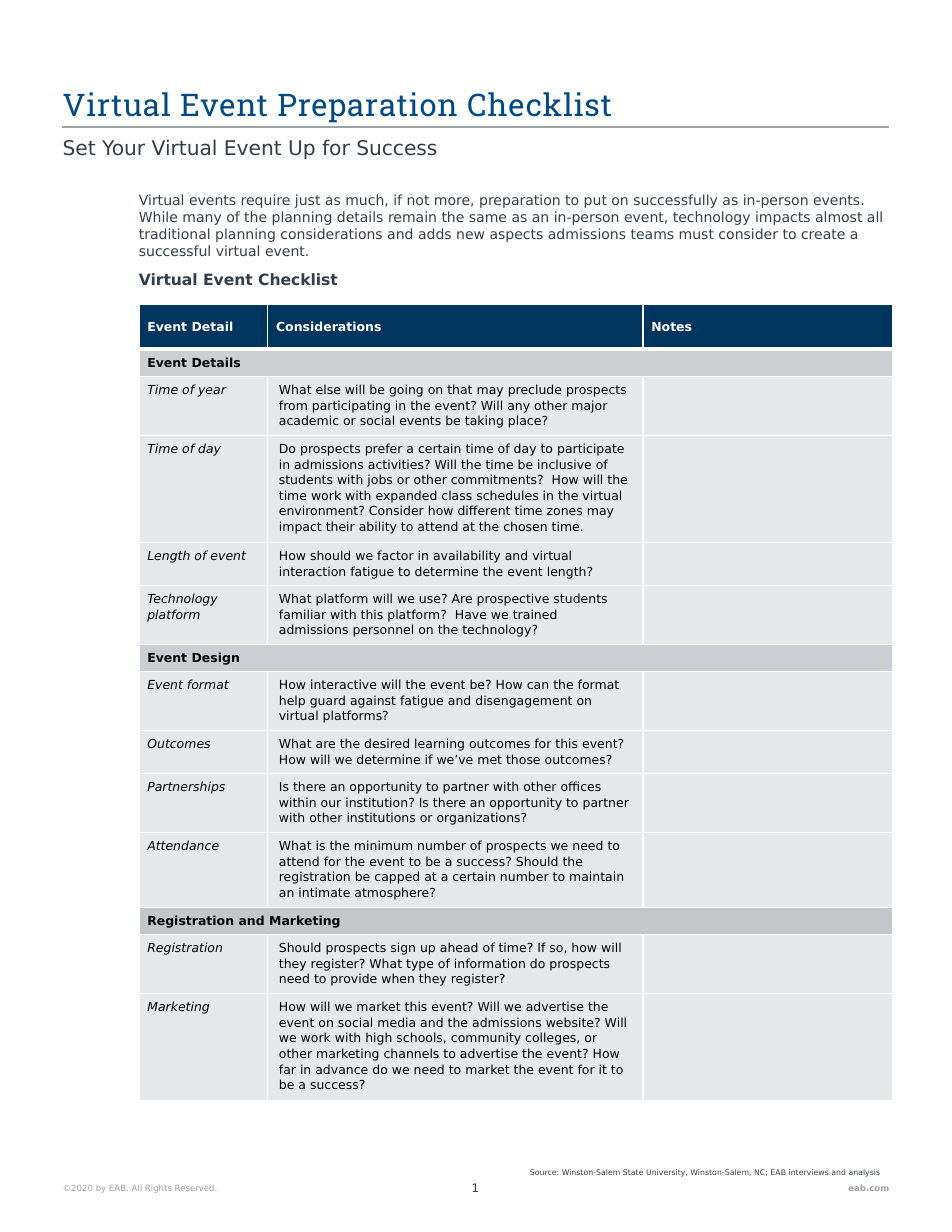
from dataclasses import dataclass

from lxml import etree
from pptx import Presentation
from pptx.dml.color import RGBColor
from pptx.enum.shapes import MSO_CONNECTOR
from pptx.enum.text import MSO_ANCHOR, PP_ALIGN
from pptx.oxml.ns import qn
from pptx.util import Pt

LEFT, CENTER, RIGHT = PP_ALIGN.LEFT, PP_ALIGN.CENTER, PP_ALIGN.RIGHT
TOP, MIDDLE, BOTTOM = MSO_ANCHOR.TOP, MSO_ANCHOR.MIDDLE, MSO_ANCHOR.BOTTOM
STRAIGHT = MSO_CONNECTOR.STRAIGHT


@dataclass(frozen=True)
class Theme:
    body_font: str = "DejaVu Sans"
    title_font: str = "Roboto Slab"
    title: str = "004B87"
    text: str = "333E48"
    muted: str = "9DA2A7"
    black: str = "000000"
    white: str = "FFFFFF"
    header: str = "00355F"
    row: str = "E7E8EA"
    title_size: float = 20
    subtitle_size: float = 13
    heading_size: float = 10
    intro_size: float = 9
    table_size: float = 8
    page_size: float = 7.5
    footer_size: float = 5.5
    source_size: float = 5


HEADINGS = ("Event Detail", "Considerations", "Notes")
COLUMN_WIDTHS = (82.8, 241.2, 160.56)
HEADER_HEIGHT = 28.8
LINE_HEIGHT = 10.2
CELL_PADDING = 7.2

SECTIONS = [
    ("Event Details", "CCCED2", [
        ("Time of year", 3, "What else will be going on that may preclude prospects from participating in the event? "
         "Will any other major academic or social events be taking place?"),
        ("Time of day", 6, "Do prospects prefer a certain time of day to participate in admissions activities? "
         "Will the time be inclusive of students with jobs or other commitments?  How will the time work with "
         "expanded class schedules in the virtual environment? Consider how different time zones may impact "
         "their ability to attend at the chosen time."),
        ("Length of event", 2, "How should we factor in availability and virtual interaction fatigue to determine "
         "the event length?"),
        ("Technology platform", 3, "What platform will we use? Are prospective students familiar with this "
         "platform?  Have we trained admissions personnel on the technology?"),
    ]),
    ("Event Design", "CBCED2", [
        ("Event format", 3, "How interactive will the event be? How can the format help guard against fatigue and "
         "disengagement on virtual platforms?"),
        ("Outcomes", 2, "What are the desired learning outcomes for this event? How will we determine if we’ve met "
         "those outcomes?"),
        ("Partnerships", 3, "Is there an opportunity to partner with other offices within our institution? "
         "Is there an opportunity to partner with other institutions or organizations?"),
        ("Attendance", 4, "What is the minimum number of prospects we need to attend for the event to be a success? "
         "Should the registration be capped at a certain number to maintain an intimate atmosphere?"),
    ]),
    ("Registration and Marketing", "C4C7CA", [
        ("Registration", 3, "Should prospects sign up ahead of time? If so, how will they register? What type of "
         "information do prospects need to provide when they register?"),
        ("Marketing", 6, "How will we market this event? Will we advertise the event on social media and the "
         "admissions website? Will we work with high schools, community colleges, or other marketing channels to "
         "advertise the event? How far in advance do we need to market the event for it to be a success?"),
    ]),
]


class ChecklistPage:
    def __init__(self, slide, theme):
        self.slide = slide
        self.theme = theme

    def add_run(self, para, text, size, color, bold=False, italic=False, font=None):
        span = para.add_run()
        span.text = text
        span.font.name = font or self.theme.body_font
        span.font.size = Pt(size)
        span.font.bold = bold
        span.font.italic = italic
        span.font.color.rgb = RGBColor.from_string(color)
        return span

    def prepare_frame(self, frame, anchor):
        frame.margin_left = frame.margin_top = frame.margin_right = frame.margin_bottom = 0
        frame.word_wrap = True
        frame.vertical_anchor = anchor

    def title(self, left, top, width, height, text):
        box = self.slide.shapes.title
        box.left, box.top, box.width, box.height = Pt(left), Pt(top), Pt(width), Pt(height)
        self.prepare_frame(box.text_frame, BOTTOM)
        para = box.text_frame.paragraphs[0]
        para.alignment = LEFT
        para.line_spacing = 0.9
        span = self.add_run(para, text, self.theme.title_size, self.theme.title, font=self.theme.title_font)
        span.font._element.set("spc", "50")

    def text(self, left, top, width, height, text, size, color=None, bold=False, align=LEFT, anchor=TOP):
        box = self.slide.shapes.add_textbox(Pt(left), Pt(top), Pt(width), Pt(height))
        self.prepare_frame(box.text_frame, anchor)
        para = box.text_frame.paragraphs[0]
        para.alignment = align
        self.add_run(para, text, size, color or self.theme.text, bold)

    def rule(self, left, top, right):
        line = self.slide.shapes.add_connector(STRAIGHT, Pt(left), Pt(top), Pt(right), Pt(top))
        line.line.color.rgb = RGBColor.from_string(self.theme.muted)
        line.line.width = Pt(1)
        etree.SubElement(line._element.spPr, qn("a:effectLst"))

    def cell(self, cell, text, fill, color=None, bold=False, italic=False, inset=5.4, anchor=TOP, bottom=1):
        cell.margin_left = cell.margin_right = Pt(inset)
        cell.margin_top = cell.margin_bottom = Pt(CELL_PADDING / 2)
        cell.vertical_anchor = anchor
        para = cell.text_frame.paragraphs[0]
        size = self.theme.table_size
        if text:
            para.line_spacing = 1.07
            self.add_run(para, text, size, color or self.theme.black, bold, italic)
        else:
            etree.SubElement(para._p, qn("a:endParaRPr"), sz=str(size * 100))
        properties = cell._tc.get_or_add_tcPr()
        for side, width in (("L", 1), ("R", 1), ("T", 1), ("B", bottom)):
            border = etree.SubElement(properties, qn(f"a:ln{side}"), w=str(Pt(width)))
            solid = etree.SubElement(border, qn("a:solidFill"))
            etree.SubElement(solid, qn("a:srgbClr"), val=self.theme.white)
        cell.fill.solid()
        cell.fill.fore_color.rgb = RGBColor.from_string(fill)

    def checklist(self, left, top):
        theme = self.theme
        heights = [HEADER_HEIGHT]
        for _, _, items in SECTIONS:
            heights += [CELL_PADDING + LINE_HEIGHT * lines for lines in [1] + [item[1] for item in items]]
        frame = self.slide.shapes.add_table(
            len(heights), len(COLUMN_WIDTHS), Pt(left), Pt(top), Pt(sum(COLUMN_WIDTHS)), Pt(sum(heights)))
        table = frame.table
        table.horz_banding = False
        for column, width in zip(table.columns, COLUMN_WIDTHS):
            column.width = Pt(width)
        for row, height in zip(table.rows, heights):
            row.height = Pt(height)
        for column, heading in enumerate(HEADINGS):
            self.cell(table.cell(0, column), heading, theme.header, theme.white, True, anchor=MIDDLE, bottom=3)
        row = 1
        for section, fill, items in SECTIONS:
            table.cell(row, 0).merge(table.cell(row, 2))
            for column, text in enumerate((section, "", "")):
                self.cell(table.cell(row, column), text, fill, bold=True)
            for row, (detail, _, question) in enumerate(items, row + 1):
                self.cell(table.cell(row, 0), detail, theme.row, italic=True)
                self.cell(table.cell(row, 1), question, theme.row, inset=7.2)
                self.cell(table.cell(row, 2), "", theme.row)
            row += 1


def main():
    deck = Presentation()
    deck.slide_width, deck.slide_height = Pt(612), Pt(792)
    theme = Theme()
    page = ChecklistPage(deck.slides.add_slide(deck.slide_layouts[5]), theme)
    margin, indent, width = 40.3, 89.3, 532
    page.text(539.3, 756.7, 32.4, 13.7, "eab.com", theme.footer_size, theme.muted, True, RIGHT, MIDDLE)
    page.text(289.4, 758.9, 32.4, 9.4, "1", theme.page_size, align=CENTER)
    page.text(margin, 760.3, 172, 6.5, "©2020 by EAB. All Rights Reserved.", theme.footer_size, theme.muted)
    page.rule(39.6, 81.5, 571.7)
    page.title(margin, 57.6, width, 21.6, "Virtual Event Preparation Checklist")
    page.text(margin, 87.1, width, 15.8, "Set Your Virtual Event Up for Success", theme.subtitle_size)
    page.text(340.6, 751, 231.1, 5.8,
              "Source: Winston-Salem State University, Winston-Salem, NC; EAB interviews and analysis",
              theme.source_size, anchor=BOTTOM)
    page.text(indent, 173.5, 432.7, 12.2, "Virtual Event Checklist", theme.heading_size, bold=True)
    page.checklist(indent, 195.8)
    page.text(indent, 123.1, 482.4, 43.9,
              "Virtual events require just as much, if not more, preparation to put on successfully as in-person "
              "events. While many of the planning details remain the same as an in-person event, technology impacts "
              "almost all traditional planning considerations and adds new aspects admissions teams must consider "
              "to create a successful virtual event.", theme.intro_size)
    deck.save("out.pptx")


if __name__ == "__main__":
    main()
